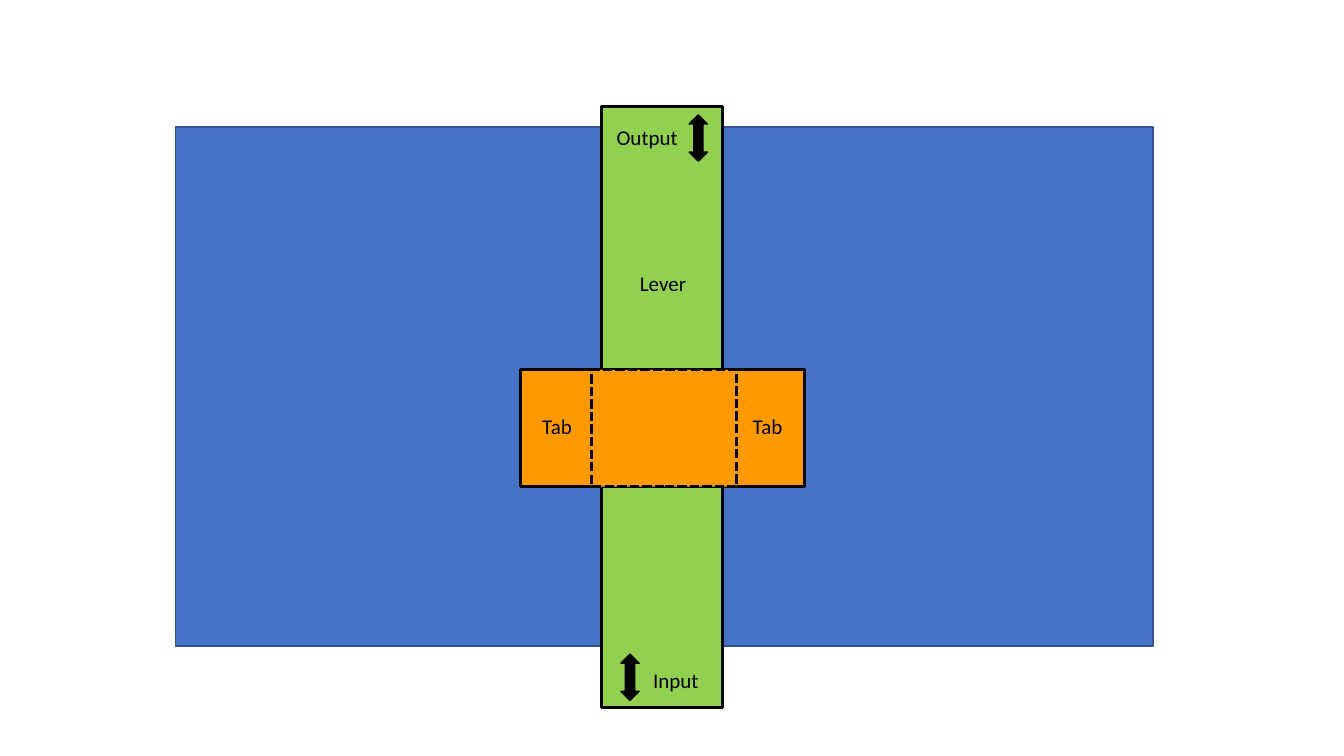
from pptx import Presentation
from pptx.dml.color import RGBColor
from pptx.enum.dml import MSO_LINE
from pptx.enum.shapes import MSO_SHAPE
from pptx.enum.text import MSO_ANCHOR, MSO_AUTO_SIZE, PP_ALIGN
from pptx.util import Pt

RECTANGLE = MSO_SHAPE.RECTANGLE
DOUBLE_ARROW = MSO_SHAPE.UP_DOWN_ARROW
DASHED = MSO_LINE.SQUARE_DOT
TOP = MSO_ANCHOR.TOP
LEFT = PP_ALIGN.LEFT
FIT_SHAPE = MSO_AUTO_SIZE.SHAPE_TO_FIT_TEXT

BLUE, DARK_BLUE = "4472C4", "325491"
GREEN, ORANGE, BLACK = "92D050", "FF9900", "000000"
BLANK_LAYOUT = 6


def color(hex_string):
    return RGBColor.from_string(hex_string)


def add_block(shapes, kind, box, fill, line=None, line_width=1, dash=None):
    shape = shapes.add_shape(kind, *map(Pt, box))
    shape.shadow.inherit = False
    shape.fill.solid()
    shape.fill.fore_color.rgb = color(fill)
    if line is None:
        shape.line.fill.background()
        return shape
    shape.line.color.rgb = color(line)
    shape.line.width = Pt(line_width)
    if dash is not None:
        shape.line.dash_style = dash
    return shape


def write_label(shape, text, wrap):
    frame = shape.text_frame
    frame.word_wrap = wrap
    frame.auto_size = FIT_SHAPE
    frame.vertical_anchor = TOP
    paragraph = frame.paragraphs[0]
    paragraph.alignment = LEFT
    run = paragraph.add_run()
    run.text = text
    run.font.name = "Calibri"
    run.font.size = Pt(15)
    run.font.color.rgb = color(BLACK)


def add_label(shapes, text, left, top, width):
    write_label(shapes.add_textbox(Pt(left), Pt(top), Pt(width), Pt(26.6)), text, True)


def add_lever(slide):
    shapes = slide.shapes.add_group_shape().shapes
    add_block(shapes, RECTANGLE, (429.8, 76.3, 86.4, 429.1), GREEN, BLACK, 2.25)
    for left, top in ((443.5, 467.3), (492.3, 82.1)):
        add_block(shapes, DOUBLE_ARROW, (left, top, 13, 33.1), BLACK, BLACK)
    add_label(shapes, "Output", 433.4, 85.7, 69.8)
    add_label(shapes, "Lever", 450, 189.4, 54)
    add_label(shapes, "Input", 459.4, 473, 58.3)


def add_bracket(slide):
    shapes = slide.shapes.add_group_shape().shapes
    top, height = 264.2, 83.5
    add_block(shapes, RECTANGLE, (371.5, top, 203, height), ORANGE, BLACK, 2.25)
    add_block(shapes, RECTANGLE, (422.6, top, 103.7, height), ORANGE, BLACK, 2.25, DASHED)
    for left in (380.2, 530.6):
        tab = add_block(shapes, RECTANGLE, (left, 291.6, 39.6, 33.8), ORANGE)
        write_label(tab, "Tab", False)


def main():
    presentation = Presentation()
    presentation.slide_width = Pt(960)
    presentation.slide_height = Pt(540)
    slide = presentation.slides.add_slide(presentation.slide_layouts[BLANK_LAYOUT])
    add_block(slide.shapes, RECTANGLE, (125.3, 90.7, 698.4, 370.8), BLUE, DARK_BLUE)
    add_lever(slide)
    add_bracket(slide)
    presentation.save("out.pptx")


if __name__ == "__main__":
    main()
